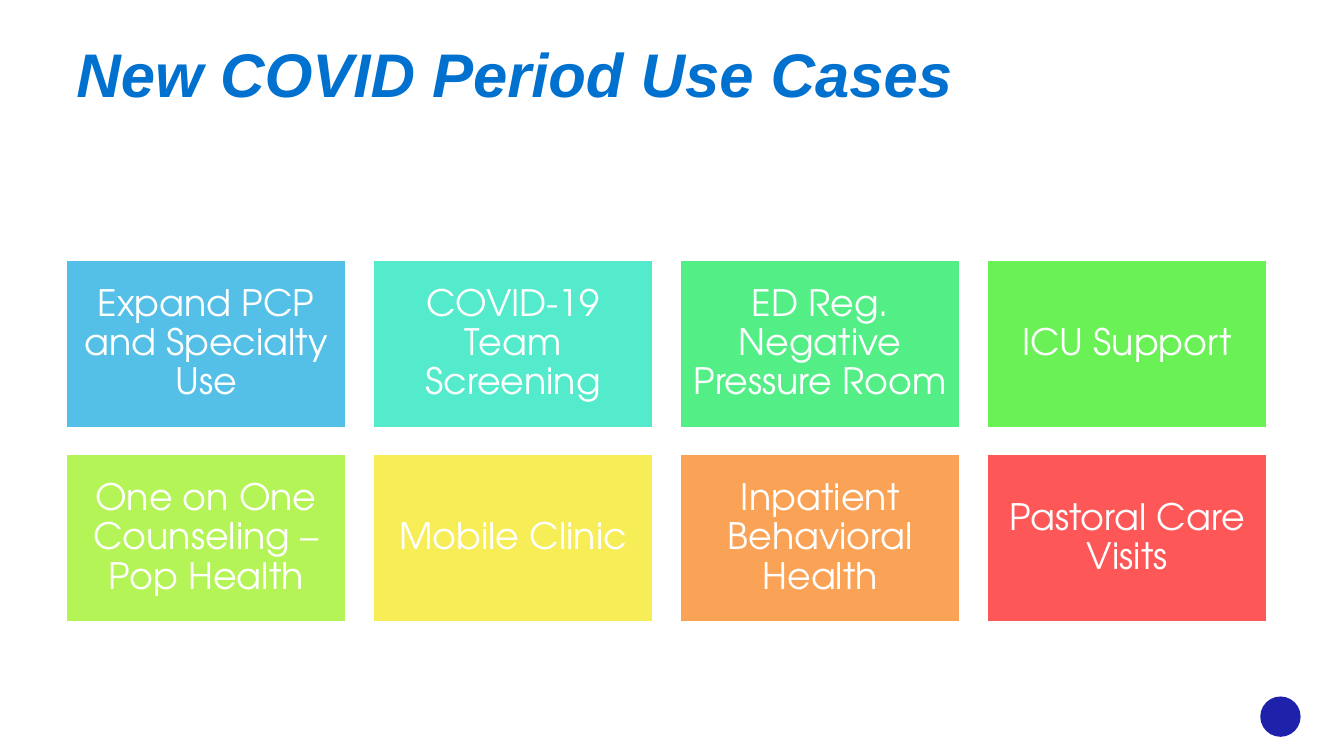
import pptx
import pptx.util
import pptx.dml.color
import pptx.enum.shapes
import pptx.enum.text

Inches = pptx.util.Inches
Pt = pptx.util.Pt
RGBColor = pptx.dml.color.RGBColor
SHAPE = pptx.enum.shapes.MSO_SHAPE
ANCHOR = pptx.enum.text.MSO_ANCHOR
ALIGN = pptx.enum.text.PP_ALIGN

WHITE = RGBColor(0xFF, 0xFF, 0xFF)
BLUE = RGBColor(0x00, 0x71, 0xCF)
NAVY = RGBColor(0x1E, 0x22, 0xAA)

TITLE = "New COVID Period Use Cases"
CASES = [
    ("Expand PCP and Specialty Use", RGBColor(0x54, 0xC0, 0xE7)),
    ("COVID-19 Team Screening", RGBColor(0x54, 0xEB, 0xCC)),
    ("ED Reg. Negative Pressure Room", RGBColor(0x54, 0xEE, 0x87)),
    ("ICU Support", RGBColor(0x69, 0xF1, 0x55)),
    ("One on One Counseling – Pop Health", RGBColor(0xB5, 0xF4, 0x56)),
    ("Mobile Clinic", RGBColor(0xF7, 0xED, 0x56)),
    ("Inpatient Behavioral Health", RGBColor(0xFA, 0xA3, 0x57)),
    ("Pastoral Care Visits", RGBColor(0xFE, 0x57, 0x57)),
]
COLS = 4
LEFT, TOP = 0.66, 2.58
WIDE, HIGH = 2.77, 1.66
STEP_X, STEP_Y = 3.045, 1.93


def add_shape(slide, kind, box, fill, line=None):
    shape = slide.shapes.add_shape(kind, *map(Inches, box))
    shape.shadow.inherit = False
    shape.fill.solid()
    shape.fill.fore_color.rgb = fill
    if line is None:
        shape.line.fill.background()
    else:
        shape.line.color.rgb = line
        shape.line.width = Pt(1)
    return shape


def set_text(frame, text, face, size, color, inset, space):
    frame.word_wrap = True
    (frame.margin_left, frame.margin_top,
     frame.margin_right, frame.margin_bottom) = map(Inches, inset)
    para = frame.paragraphs[0]
    para.text = text
    para.line_spacing = space
    para.font.name = face
    para.font.size = Pt(size)
    para.font.color.rgb = color
    return para


def main():
    deck = pptx.Presentation()
    deck.slide_width = Inches(13.33)
    deck.slide_height = Inches(7.5)
    slide = deck.slides.add_slide(deck.slide_layouts[6])

    add_shape(slide, SHAPE.OVAL, (12.5, 6.91, 0.4, 0.4), NAVY)

    for i, (text, fill) in enumerate(CASES):
        row, col = divmod(i, COLS)
        box = (LEFT + col * STEP_X, TOP + row * STEP_Y, WIDE, HIGH)
        card = add_shape(slide, SHAPE.RECTANGLE, box, fill, WHITE)
        frame = card.text_frame
        frame.vertical_anchor = ANCHOR.MIDDLE
        para = set_text(frame, text, "TeX Gyre Adventor", 26, WHITE,
                        (0.11,) * 4, 0.9)
        para.alignment = ALIGN.CENTER

    title = slide.shapes.add_textbox(*map(Inches, (LEFT, 0.4, 11.9, 1.45)))
    frame = title.text_frame
    frame.vertical_anchor = ANCHOR.TOP
    para = set_text(frame, TITLE, "Arial", 44, BLUE,
                    (0.1, 0.13, 0.1, 0.05), 0.75)
    para.font.bold = True
    para.font.italic = True

    deck.save("out.pptx")


if __name__ == "__main__":
    main()
